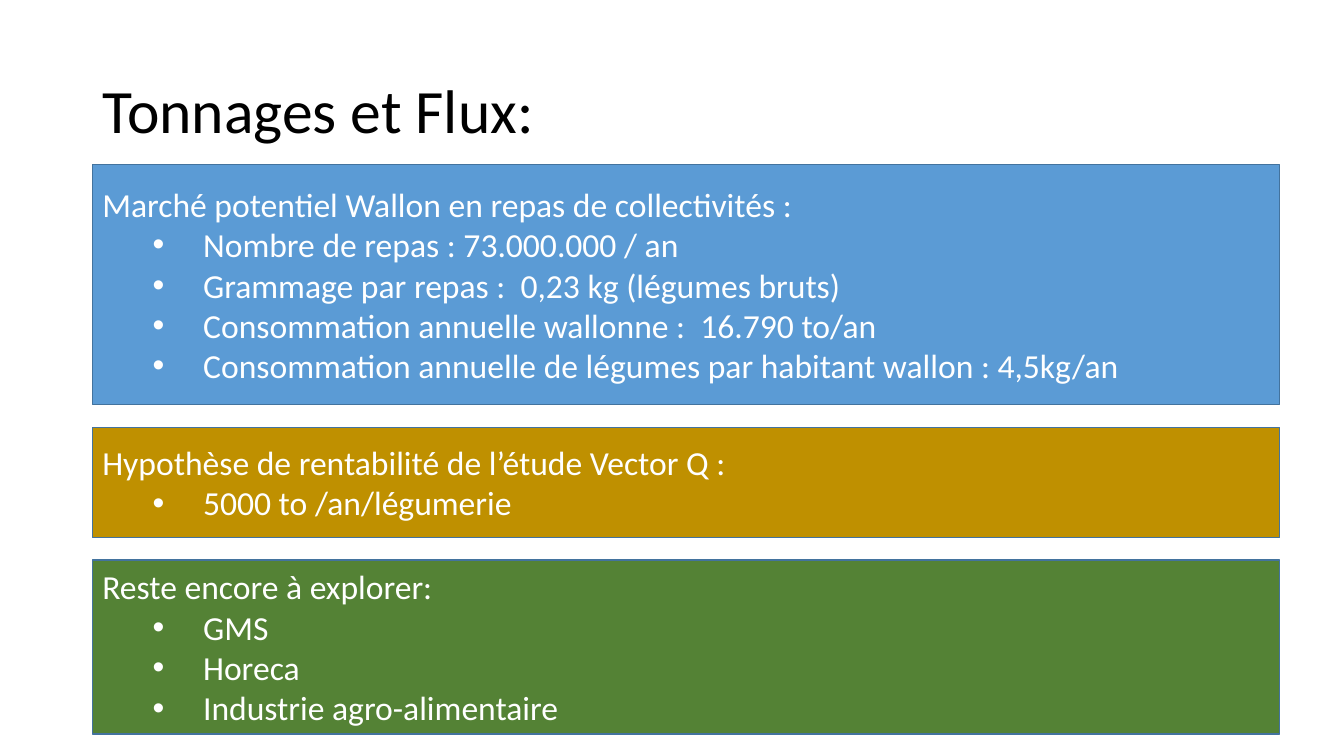
"""Build the slide on vegetable tonnages and flows."""
import lxml.etree
import pptx
import pptx.dml.color
import pptx.enum.shapes
import pptx.enum.text
import pptx.oxml.ns
import pptx.util

Cm = pptx.util.Cm
Pt = pptx.util.Pt
qn = pptx.oxml.ns.qn
RGB = pptx.dml.color.RGBColor.from_string

HUES = {
    "black": "000000",
    "white": "FFFFFF",
    "blue": "5B9BD5",
    "gold": "BF9000",
    "green": "548235",
    "edge": "43739E",
}
LEFT = Cm(2.33)
GAP = 0.57


def write(frame, text, size=24, hue="white", bullet=False, spacing=None):
    para = frame.add_paragraph() if frame.text else frame.paragraphs[0]
    para.alignment = pptx.enum.text.PP_ALIGN.LEFT
    para.line_spacing = spacing
    run = para.add_run()
    run.text = text
    run.font.size = Pt(size)
    run.font.name = "Calibri"
    run.font.color.rgb = RGB(HUES[hue])
    if bullet:
        para.level = 1
        props = para._p.get_or_add_pPr()
        props.set("marL", str(Cm(2.54)))
        props.set("indent", str(-Cm(1.27)))
        lxml.etree.SubElement(props, qn("a:buFont")).set("typeface", "Arial")
        lxml.etree.SubElement(props, qn("a:buChar")).set("char", "•")


deck = pptx.Presentation()
deck.slide_width = Cm(33.87)
deck.slide_height = Cm(19.05)
slide = deck.slides.add_slide(deck.slide_layouts[5])

title = slide.shapes.title
title.left, title.top = LEFT, Cm(1.01)
title.width, title.height = Cm(29.21), Cm(3.68)
title.text_frame.auto_size = pptx.enum.text.MSO_AUTO_SIZE.NONE
title.text_frame.vertical_anchor = pptx.enum.text.MSO_ANCHOR.MIDDLE
write(title.text_frame, "Tonnages et Flux:", size=44, hue="black", spacing=0.9)

boxes = [
    ("blue", 6.05, "Marché potentiel Wallon en repas de collectivités :", [
        "Nombre de repas : 73.000.000 / an",
        "Grammage par repas :  0,23 kg (légumes bruts)",
        "Consommation annuelle wallonne :  16.790 to/an",
        "Consommation annuelle de légumes par habitant wallon : 4,5kg/an",
    ]),
    ("gold", 2.77, "Hypothèse de rentabilité de l’étude Vector Q :", [
        "5000 to /an/légumerie",
    ]),
    ("green", 4.39, "Reste encore à explorer:", [
        "GMS",
        "Horeca",
        "Industrie agro-alimentaire",
    ]),
]

top = 4.15
for hue, height, head, items in boxes:
    box = slide.shapes.add_shape(
        pptx.enum.shapes.MSO_SHAPE.RECTANGLE, LEFT, Cm(top), Cm(29.92), Cm(height))
    box.shadow.inherit = False
    box.fill.solid()
    box.fill.fore_color.rgb = RGB(HUES[hue])
    box.line.color.rgb = RGB(HUES["edge"])
    box.line.width = Pt(1)
    frame = box.text_frame
    frame.word_wrap = True
    frame.vertical_anchor = pptx.enum.text.MSO_ANCHOR.MIDDLE
    write(frame, head)
    for item in items:
        write(frame, item, bullet=True)
    top += height + GAP

deck.save("out.pptx")
